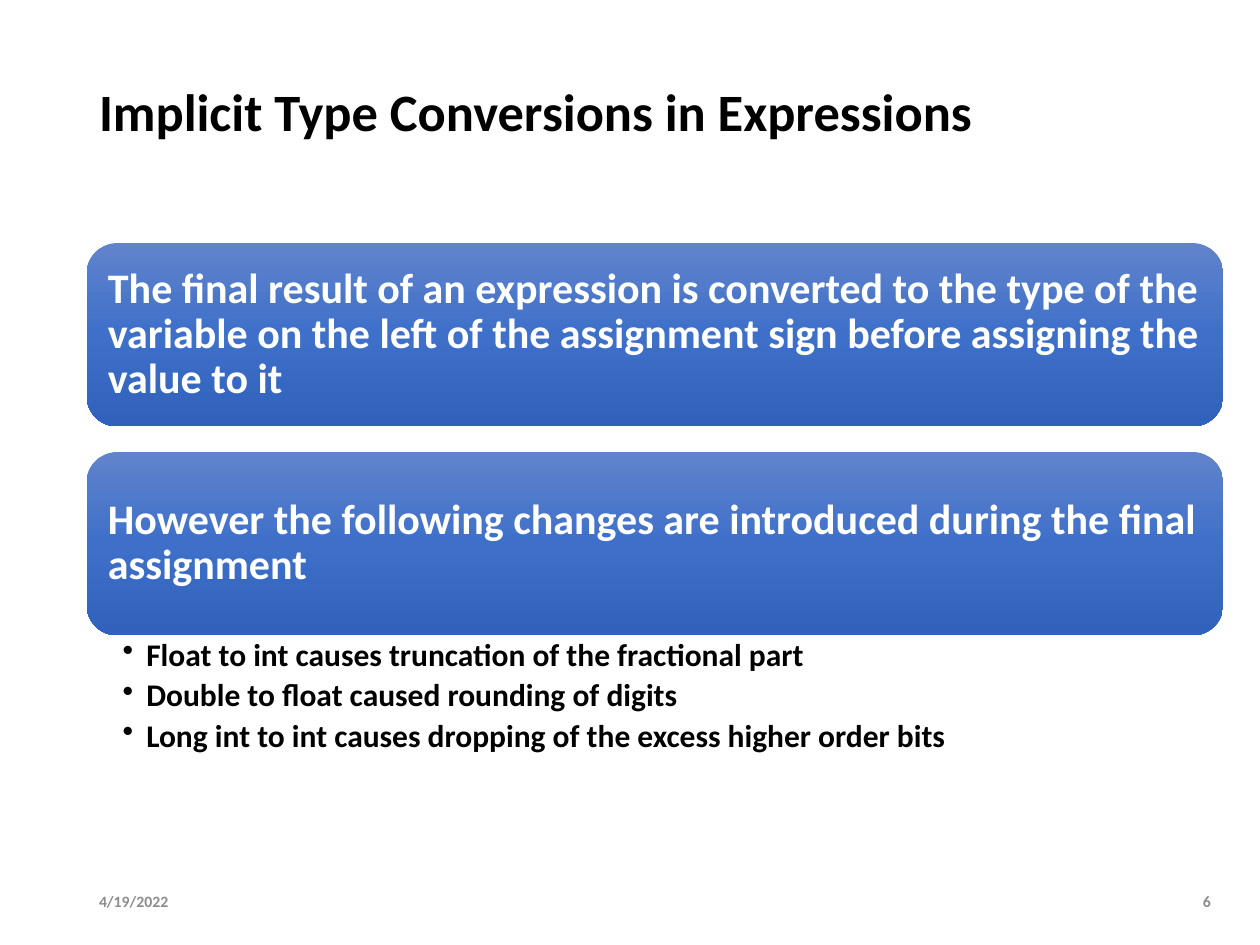
import pptx
import pptx.util
import pptx.dml.color
import pptx.enum.shapes
import pptx.enum.text
import pptx.oxml
import pptx.oxml.ns

Pt = pptx.util.Pt
ANCHOR = pptx.enum.text.MSO_ANCHOR
ALIGN = pptx.enum.text.PP_ALIGN

TITLE = "Implicit Type Conversions in Expressions"
DATE = "4/19/2022"
PAGE = "6"
STATEMENTS = [
    "The final result of an expression is converted to the type of the variable "
    "on the left of the assignment sign before assigning the value to it",
    "However the following changes are introduced during the final assignment",
]
CHANGES = [
    "Float to int causes truncation of the fractional part",
    "Double to float caused rounding of digits",
    "Long int to int causes dropping of the excess higher order bits",
]
PANEL_STOPS = [(0, "6183CB"), (50, "3E70CA"), (100, "3062BB")]

LEFT, WIDTH = 49.5, 649.5
PANEL_TOP, PANEL_HEIGHT, PANEL_PITCH = 138.9, 104.8, 119.4
FOOTER_TOP, FOOTER_HEIGHT = 500.5, 28.75
BULLET_INDENT = 13.5


def rgb(value):
    return pptx.dml.color.RGBColor.from_string(value)


def write(shape, *lines, size, color="000000", align=ALIGN.LEFT, anchor=ANCHOR.MIDDLE,
          insets=(7.2, 3.6, 7.2, 3.6), spacing=1.0, after=0, bullet=None):
    frame = shape.text_frame
    frame.word_wrap = True
    frame.vertical_anchor = anchor
    frame.margin_left, frame.margin_top, frame.margin_right, frame.margin_bottom = map(Pt, insets)
    for index, line in enumerate(lines):
        paragraph = frame.paragraphs[0] if index == 0 else frame.add_paragraph()
        paragraph.text = line
        paragraph.alignment = align
        paragraph.line_spacing = spacing
        paragraph.space_after = Pt(after)
        if bullet:
            properties = paragraph._p.get_or_add_pPr()
            properties.set("marL", str(Pt(BULLET_INDENT)))
            properties.set("indent", str(-Pt(BULLET_INDENT)))
            mark = pptx.oxml.parse_xml(
                f'<a:buChar {pptx.oxml.ns.nsdecls("a")} char="{bullet}"/>')
            properties.append(mark)
        font = paragraph.font
        font.name, font.size, font.bold = "Calibri", Pt(size), True
        font.color.rgb = rgb(color)


def add_text(left, top, width, height, *lines, **style):
    box = slide.shapes.add_textbox(Pt(left), Pt(top), Pt(width), Pt(height))
    write(box, *lines, **style)


def add_panel(top, statement):
    panel = slide.shapes.add_shape(pptx.enum.shapes.MSO_SHAPE.ROUNDED_RECTANGLE,
                                   Pt(LEFT), Pt(top), Pt(WIDTH), Pt(PANEL_HEIGHT))
    panel.shadow.inherit = False
    panel.line.fill.background()
    stops = "".join(f'<a:gs pos="{position * 1000}"><a:srgbClr val="{color}"/></a:gs>'
                    for position, color in PANEL_STOPS)
    gradient = pptx.oxml.parse_xml(
        f'<a:gradFill {pptx.oxml.ns.nsdecls("a")} rotWithShape="1">'
        f'<a:gsLst>{stops}</a:gsLst><a:lin ang="5400000" scaled="0"/></a:gradFill>')
    panel._element.spPr.find(pptx.oxml.ns.qn("a:prstGeom")).addnext(gradient)
    write(panel, statement, size=24, color="FFFFFF", insets=(7.2,) * 4, spacing=0.9)


deck = pptx.Presentation()
deck.slide_width, deck.slide_height = Pt(720), Pt(540)
slide = deck.slides.add_slide(deck.slide_layouts[6])

add_text(LEFT, 40.3, WIDTH, 49.7, TITLE, size=30, spacing=0.9)
add_text(LEFT, FOOTER_TOP, 68.4, FOOTER_HEIGHT, DATE, size=9, color="8C8C8C")
add_text(LEFT + WIDTH - 28, FOOTER_TOP, 28, FOOTER_HEIGHT, PAGE,
         size=9, color="8C8C8C", align=ALIGN.RIGHT)

for row, statement in enumerate(STATEMENTS):
    add_panel(PANEL_TOP + row * PANEL_PITCH, statement)

changes_top = PANEL_TOP + (len(STATEMENTS) - 1) * PANEL_PITCH + PANEL_HEIGHT
add_text(LEFT, changes_top, WIDTH, 85, *CHANGES, size=18, anchor=ANCHOR.TOP,
         insets=(20.6, 2.2, 10, 2.2), spacing=0.9, after=3.6, bullet="•")

deck.save("out.pptx")
